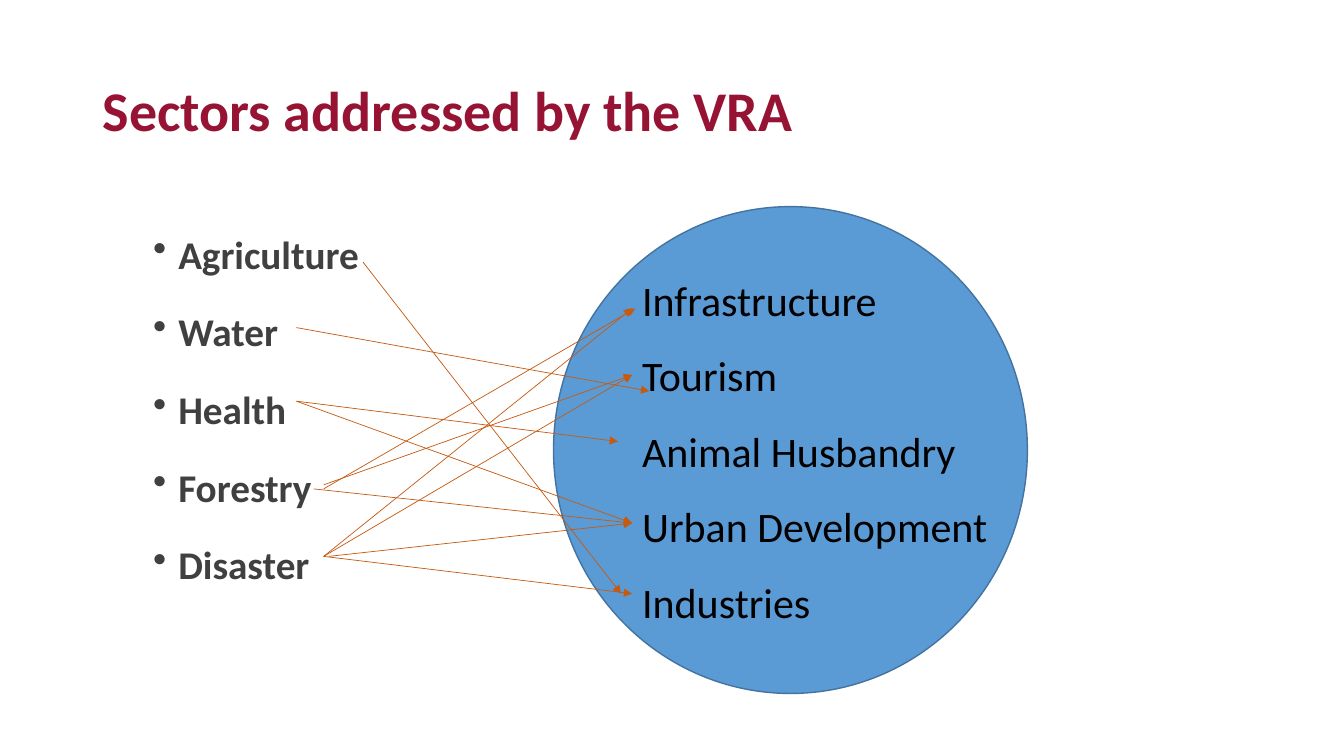
from collections import namedtuple
from dataclasses import dataclass

from lxml.etree import SubElement
from pptx import Presentation
from pptx.dml.color import RGBColor
from pptx.enum.shapes import MSO_CONNECTOR, MSO_SHAPE
from pptx.enum.text import MSO_ANCHOR, MSO_AUTO_SIZE, PP_ALIGN
from pptx.oxml.ns import qn
from pptx.util import Inches, Pt

Box = namedtuple("Box", "left top width height")


@dataclass(frozen=True)
class Theme:
    font: str = "Calibri"
    title_color: str = "961334"
    sector_color: str = "404040"
    linked_color: str = "000000"
    circle_fill: str = "5B9BD5"
    circle_line: str = "43739E"
    arrow: str = "C55A11"
    title_size: int = 40
    sector_size: int = 28
    linked_size: int = 30


THEME = Theme()
SECTORS = ["Agriculture", "Water", "Health", "Forestry", "Disaster"]
LINKED_SECTORS = ["Infrastructure", "Tourism", "Animal Husbandry",
                  "Urban Development", "Industries"]

# Arrow start and end points, in inches from the corner of the arrow region.
INFRASTRUCTURE, TOURISM = (3.33, 0.46), (3.33, 1.12)
URBAN, INDUSTRIES = (3.33, 2.59), (3.33, 3.29)
HEALTH, DISASTER = (0, 1.38), (0.27, 2.92)
ARROWS = [
    ((0.66, 0), (3.22, 3.29)),
    (HEALTH, (3.19, 1.78)),
    (HEALTH, URBAN),
    (DISASTER, INFRASTRUCTURE),
    (DISASTER, TOURISM),
    (DISASTER, INDUSTRIES),
    ((0.32, 2.92), URBAN),
    ((0.27, 2.21), TOURISM),
    ((0.17, 2.25), URBAN),
    ((0.27, 2.25), (3.36, 0.46)),
    ((0, 0.65), (3.5, 1.28)),
]


def set_all(target, values):
    for name, value in values.items():
        setattr(target, name, value)


def style_font(font, size, color, bold=False):
    set_all(font, {"name": THEME.font, "size": Pt(size), "bold": bold})
    font.color.rgb = RGBColor.from_string(color)


def place_title(slide, box):
    title = slide.shapes.title
    set_all(title, {name: Inches(value) for name, value in box._asdict().items()})
    frame = title.text_frame
    set_all(frame, {"text": "Sectors addressed by the VRA", "word_wrap": True,
                    "auto_size": MSO_AUTO_SIZE.NONE,
                    "vertical_anchor": MSO_ANCHOR.MIDDLE})
    paragraph = frame.paragraphs[0]
    set_all(paragraph, {"alignment": PP_ALIGN.LEFT, "line_spacing": 0.9})
    style_font(paragraph.font, THEME.title_size, THEME.title_color, True)


def add_bullet(paragraph):
    properties = paragraph._p.get_or_add_pPr()
    properties.set("marL", str(Inches(0.75)))
    properties.set("indent", str(Inches(-0.25)))
    SubElement(properties, qn("a:buChar"), char="•")


def add_list(slide, box, items, size, color, bulleted=False, gap=0):
    frame = slide.shapes.add_textbox(*map(Inches, box)).text_frame
    frame.word_wrap = True
    frame.text = "\n".join(items)
    for index, paragraph in enumerate(frame.paragraphs):
        if bulleted:
            add_bullet(paragraph)
        set_all(paragraph, {"line_spacing": 1.5,
                            "space_before": Pt(gap if index else 0)})
        style_font(paragraph.font, size, color, bulleted)


def add_linked_sectors(slide, box):
    """Draw the circle in the box, with the linked sectors listed over it."""
    circle = slide.shapes.add_shape(MSO_SHAPE.OVAL, *map(Inches, box))
    circle.shadow.inherit = False
    circle.fill.solid()
    circle.fill.fore_color.rgb = RGBColor.from_string(THEME.circle_fill)
    circle.line.color.rgb = RGBColor.from_string(THEME.circle_line)
    circle.line.width = Pt(1)
    labels = Box(box.left + 0.78, box.top + 0.37, 3.65, 4.49)
    add_list(slide, labels, LINKED_SECTORS, THEME.linked_size, THEME.linked_color)


def add_arrows(slide, box):
    for start, end in ARROWS:
        points = [Inches(corner + offset) for point in (start, end)
                  for corner, offset in zip((box.left, box.top), point)]
        arrow = slide.shapes.add_connector(MSO_CONNECTOR.STRAIGHT, *points)
        arrow.line.color.rgb = RGBColor.from_string(THEME.arrow)
        arrow.line.width = Pt(0.5)
        SubElement(arrow.line._get_or_add_ln(), qn("a:tailEnd"), type="triangle")
        SubElement(arrow._element.spPr, qn("a:effectLst"))


def build_sectors_slide(presentation):
    slide = presentation.slides.add_slide(presentation.slide_layouts[5])
    place_title(slide, Box(0.92, 0.4, 11.5, 1.45))
    add_list(slide, Box(0.92, 2, 11.5, 4.76), SECTORS, THEME.sector_size,
             THEME.sector_color, bulleted=True, gap=5)
    add_linked_sectors(slide, Box(5.49, 2.05, 4.7, 4.83))
    add_arrows(slide, Box(2.94, 2.6, 3.5, 3.29))


def main():
    presentation = Presentation()
    set_all(presentation, {"slide_width": Inches(13.33), "slide_height": Inches(7.5)})
    build_sectors_slide(presentation)
    presentation.save("out.pptx")


if __name__ == "__main__":
    main()
